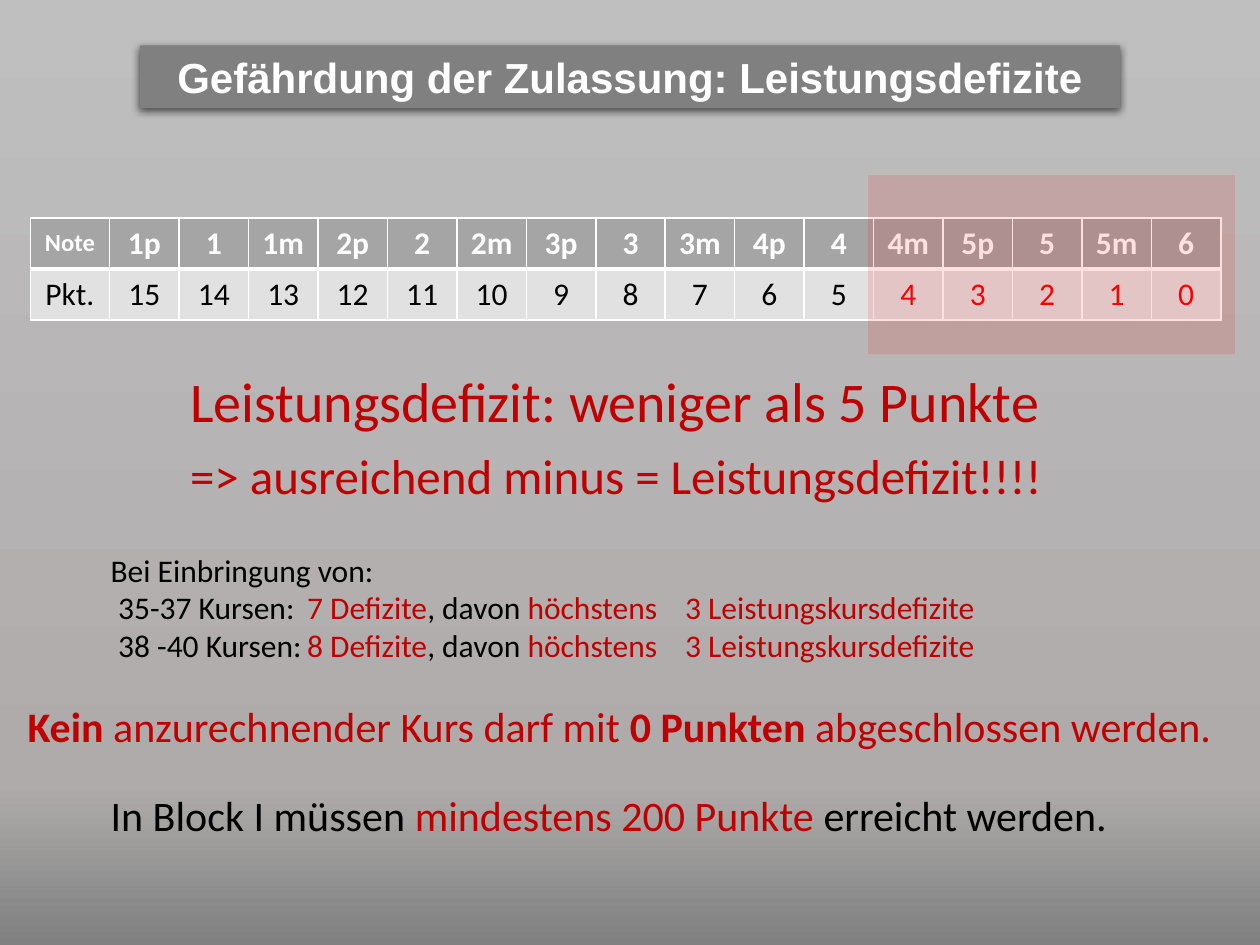
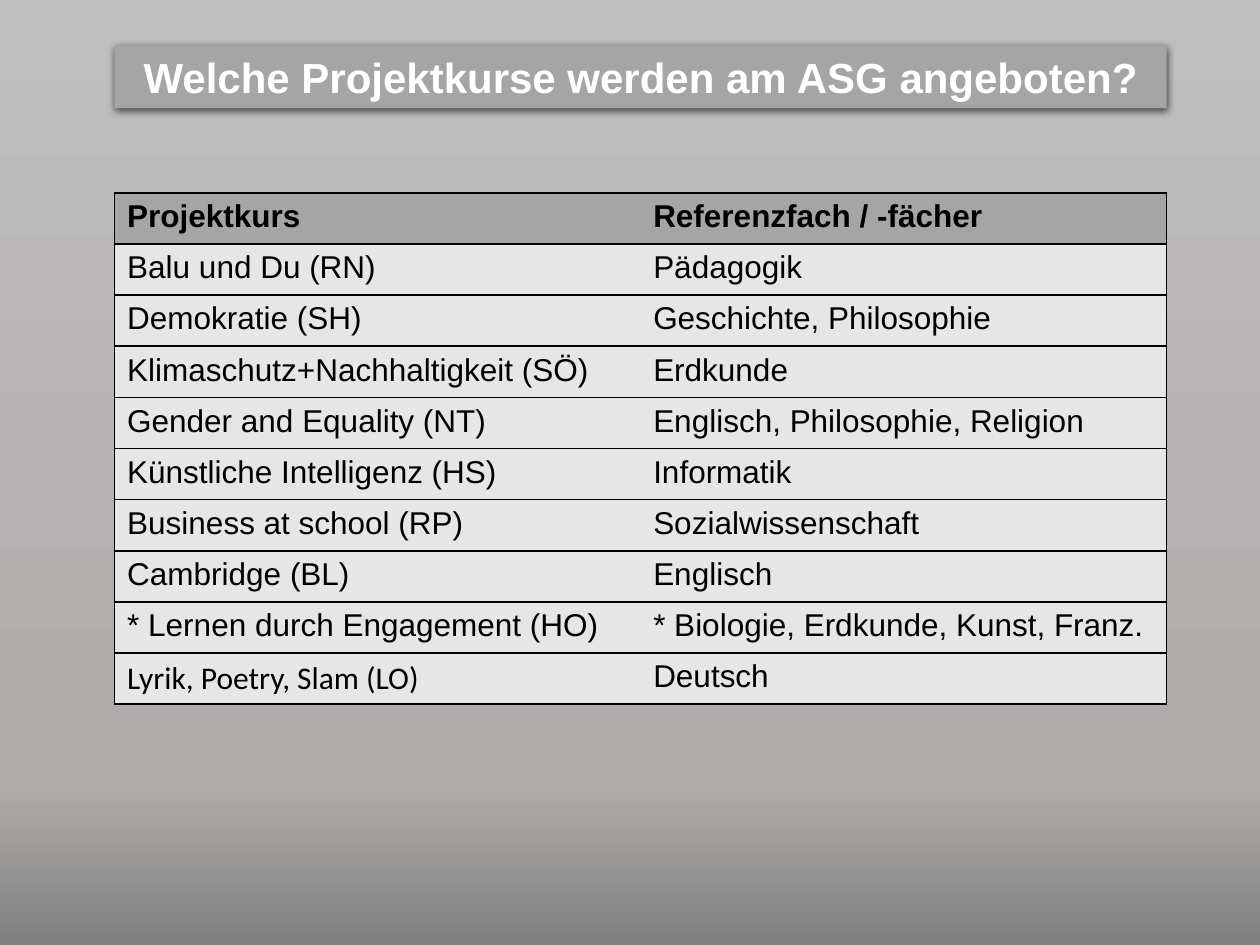
from lxml.etree import SubElement
from pptx import Presentation
from pptx.dml.color import RGBColor
from pptx.enum.shapes import MSO_SHAPE
from pptx.enum.text import MSO_ANCHOR, PP_ALIGN
from pptx.oxml.ns import qn
from pptx.util import Inches, Pt

WHITE, BLACK, RED, DARK_RED = "FFFFFF", "000000", "FF0000", "C00000"
MID_GRAY, DARK_GRAY, LIGHT_GRAY, PALE_GRAY = "A5A5A5", "808080", "E1E1E1", "E7E6E6"
BACKGROUND_STOPS = [(0, "BFBFBF"), (83, "AFABAB"), (100, DARK_GRAY)]
PLAIN_TABLE_STYLE = "{2D5ABB26-0587-4C30-8999-92F81FD0307C}"

GRADES = ["1p", "1", "1m", "2p", "2", "2m", "3p", "3", "3m", "4p", "4", "4m", "5p", "5", "5m", "6"]
PASSING_POINTS = 5
COURSE_LIMITS = [("35-37 Kursen:", "7 Defizite", 1.63), ("38 -40 Kursen:", "8 Defizite", 1.68)]
PROJECT_COURSES = [
    ("Projektkurs", "Referenzfach / -fächer"),
    ("Balu und Du (RN)", "Pädagogik"),
    ("Demokratie (SH)", "Geschichte, Philosophie"),
    ("Klimaschutz+Nachhaltigkeit (SÖ)", "Erdkunde"),
    ("Gender and Equality (NT)", "Englisch, Philosophie, Religion"),
    ("Künstliche Intelligenz (HS)", "Informatik"),
    ("Business at school (RP)", "Sozialwissenschaft"),
    ("Cambridge (BL)", "Englisch"),
    ("* Lernen durch Engagement (HO)", "* Biologie, Erdkunde, Kunst, Franz."),
    ("Lyrik, Poetry, Slam (LO)", "Deutsch"),
]


def color(value):
    """Turn a hex string into a colour."""
    return RGBColor.from_string(value)


def inches(box):
    """Convert a left, top, width, height box to lengths."""
    return [Inches(length) for length in box]


def add_text(paragraph, text, size=18, font="Calibri", ink=BLACK, bold=False):
    """Append one formatted run to a paragraph."""
    run = paragraph.add_run()
    run.text = text
    run.font.size, run.font.name, run.font.bold = Pt(size), font, bold
    run.font.color.rgb = color(ink)


def add_text_box(slide, box):
    """Add a wrapping text box and return its text frame."""
    frame = slide.shapes.add_textbox(*inches(box)).text_frame
    frame.word_wrap = True
    return frame


def add_line(slide, box, parts, **style):
    """Add a text box with one paragraph of (text, overrides) parts."""
    paragraph = add_text_box(slide, box).paragraphs[0]
    for text, overrides in parts:
        add_text(paragraph, text, **{**style, **overrides})


def add_rectangle(slide, box, fill):
    """Add a flat rectangle without an outline."""
    shape = slide.shapes.add_shape(MSO_SHAPE.RECTANGLE, *inches(box))
    shape.shadow.inherit = False
    shape.fill.solid()
    shape.fill.fore_color.rgb = color(fill)
    shape.line.fill.background()
    return shape


def add_color(parent, value, opacity=100):
    """Append a colour element with an opacity in percent."""
    element = SubElement(parent, qn("a:srgbClr"), val=value)
    if opacity < 100:
        SubElement(element, qn("a:alpha"), val=str(opacity * 1000))


def add_title(slide, box, title, fill):
    """Add the shadowed title band."""
    band = add_rectangle(slide, box, fill)
    effects = band.element.spPr.find(qn("a:effectLst"))
    shadow = SubElement(effects, qn("a:outerShdw"), blurRad=str(Pt(4.5)), dist=str(Pt(1.5)),
                        dir="5400000", algn="ctr", rotWithShape="0")
    add_color(shadow, BLACK, 63)
    paragraph = band.text_frame.paragraphs[0]
    paragraph.alignment = PP_ALIGN.CENTER
    add_text(paragraph, title, size=24, font="Arial", ink=WHITE, bold=True)


def add_table(slide, box, row_count, column_widths):
    """Add a table without a preset style and with equal rows."""
    frame = slide.shapes.add_table(row_count, len(column_widths), *inches(box))
    table = frame.table
    frame.element.find(".//" + qn("a:tableStyleId")).text = PLAIN_TABLE_STYLE
    table.first_row = table.horz_banding = False
    for column, width in zip(table.columns, column_widths):
        column.width = Inches(width)
    for row in table.rows:
        row.height = Inches(box[3] / row_count)
    return table


def style_cell(cell, fill, border, widths):
    """Set a cell's border widths by side, then its fill."""
    properties = cell._tc.get_or_add_tcPr()
    for side in "LRTB":
        if side in widths:
            line = SubElement(properties, qn("a:ln" + side), w=str(Pt(widths[side])))
            add_color(SubElement(line, qn("a:solidFill")), border)
    cell.fill.solid()
    cell.fill.fore_color.rgb = color(fill)


def add_grade_table(slide, box):
    """Add the grades with their points, deficits in red."""
    label_width = 0.63
    grade_width = (box[2] - label_width) / len(GRADES)
    table = add_table(slide, box, 2, [label_width] + [grade_width] * len(GRADES))
    points = list(range(len(GRADES) - 1, -1, -1))
    for column, (grade, point) in enumerate(zip(["Note"] + GRADES, ["Pkt."] + points)):
        deficit = column > 0 and point < PASSING_POINTS
        header, body = table.cell(0, column), table.cell(1, column)
        style_cell(header, MID_GRAY, WHITE, {"L": 1, "R": 1, "T": 1, "B": 3})
        style_cell(body, LIGHT_GRAY, WHITE, {"L": 1, "R": 1, "T": 3, "B": 1})
        for cell in (header, body):
            cell.vertical_anchor = MSO_ANCHOR.MIDDLE
            cell.text_frame.paragraphs[0].alignment = PP_ALIGN.CENTER
        add_text(header.text_frame.paragraphs[0], grade, size=18 if column else 14, ink=WHITE, bold=True)
        add_text(body.text_frame.paragraphs[0], str(point), ink=RED if deficit else BLACK)


def add_course_limits(slide, box):
    """Add the permitted deficits for each number of courses."""
    frame = add_text_box(slide, box)
    add_text(frame.paragraphs[0], "Bei Einbringung von:")
    for courses, deficits, tab in COURSE_LIMITS:
        paragraph = frame.add_paragraph()
        properties = paragraph._p.get_or_add_pPr()
        properties.set("marL", str(Inches(0.06)))
        properties.set("indent", "0")
        tabs = SubElement(properties, qn("a:tabLst"))
        for position in (tab, tab + 2.89):
            SubElement(tabs, qn("a:tab"), pos=str(Inches(position)), algn="l")
        add_text(paragraph, courses + "\t")
        add_text(paragraph, deficits, ink=DARK_RED)
        add_text(paragraph, ", davon ")
        add_text(paragraph, "höchstens\t3 Leistungskursdefizite", ink=DARK_RED)


def add_project_table(slide, box):
    """Add the project courses with their reference subjects."""
    table = add_table(slide, box, len(PROJECT_COURSES), [box[2] / 2] * 2)
    for row, texts in enumerate(PROJECT_COURSES):
        for column, text in enumerate(texts):
            cell = table.cell(row, column)
            outer_side = "R" if column else "L"
            style_cell(cell, PALE_GRAY if row else MID_GRAY, BLACK, {outer_side: 1, "T": 1, "B": 1})
            font = "Calibri" if text.startswith("Lyrik") else "Arial"
            add_text(cell.text_frame.paragraphs[0], text, font=font, bold=row == 0)


def set_background(master):
    """Give all slides the vertical gray gradient."""
    fill = master.background.fill
    fill.gradient()
    fill.gradient_angle = 270
    stops = master.element.find(".//" + qn("a:gsLst"))
    for stop in list(stops):
        stops.remove(stop)
    for position, value in BACKGROUND_STOPS:
        add_color(SubElement(stops, qn("a:gs"), pos=str(position * 1000)), value)


def build_deficit_slide(slide):
    """Build the slide on deficits that endanger admission."""
    add_title(slide, (1.11, 0.36, 7.78, 0.5), "Gefährdung der Zulassung: Leistungsdefizite", DARK_GRAY)
    add_line(slide, (1.41, 2.86, 7.48, 0.64),
             [("Leistungsdefizit: weniger als 5 Punkte", {})], size=32, ink=DARK_RED)
    add_line(slide, (1.41, 3.49, 7.48, 0.57),
             [("=> ausreichend minus = Leistungsdefizit!!!!", {})], size=28, ink=DARK_RED)
    add_grade_table(slide, (0.24, 1.73, 9.45, 0.81))
    bold = {"bold": True}
    add_line(slide, (0.12, 5.51, 9.69, 0.51),
             [("Kein", bold), (" anzurechnender Kurs darf mit ", {}), ("0 Punkten ", bold),
              ("abgeschlossen werden.", {})], size=24, ink=DARK_RED)
    add_course_limits(slide, (0.78, 4.32, 8.43, 1.01))
    add_line(slide, (0.78, 6.22, 8.27, 0.5),
             [("In Block I müssen ", {}), ("mindestens 200 Punkte ", {"ink": DARK_RED}),
              ("erreicht werden.", {})], size=24)
    highlight = add_rectangle(slide, (6.89, 1.39, 2.91, 1.42), RED)
    solid_fill = highlight.element.spPr.find(qn("a:solidFill"))
    solid_fill.remove(solid_fill[0])
    add_color(solid_fill, RED, 12)


def build_project_slide(slide):
    """Build the slide on the project courses."""
    add_title(slide, (0.91, 0.36, 8.35, 0.5), "Welche Projektkurse werden am ASG angeboten?", MID_GRAY)
    add_project_table(slide, (0.91, 1.53, 8.35, 4.06))


def main():
    """Build and save the presentation."""
    presentation = Presentation()
    presentation.slide_width, presentation.slide_height = Inches(10), Inches(7.5)
    set_background(presentation.slide_master)
    for build in (build_deficit_slide, build_project_slide):
        build(presentation.slides.add_slide(presentation.slide_layouts[6]))
    presentation.save("out.pptx")


if __name__ == "__main__":
    main()
